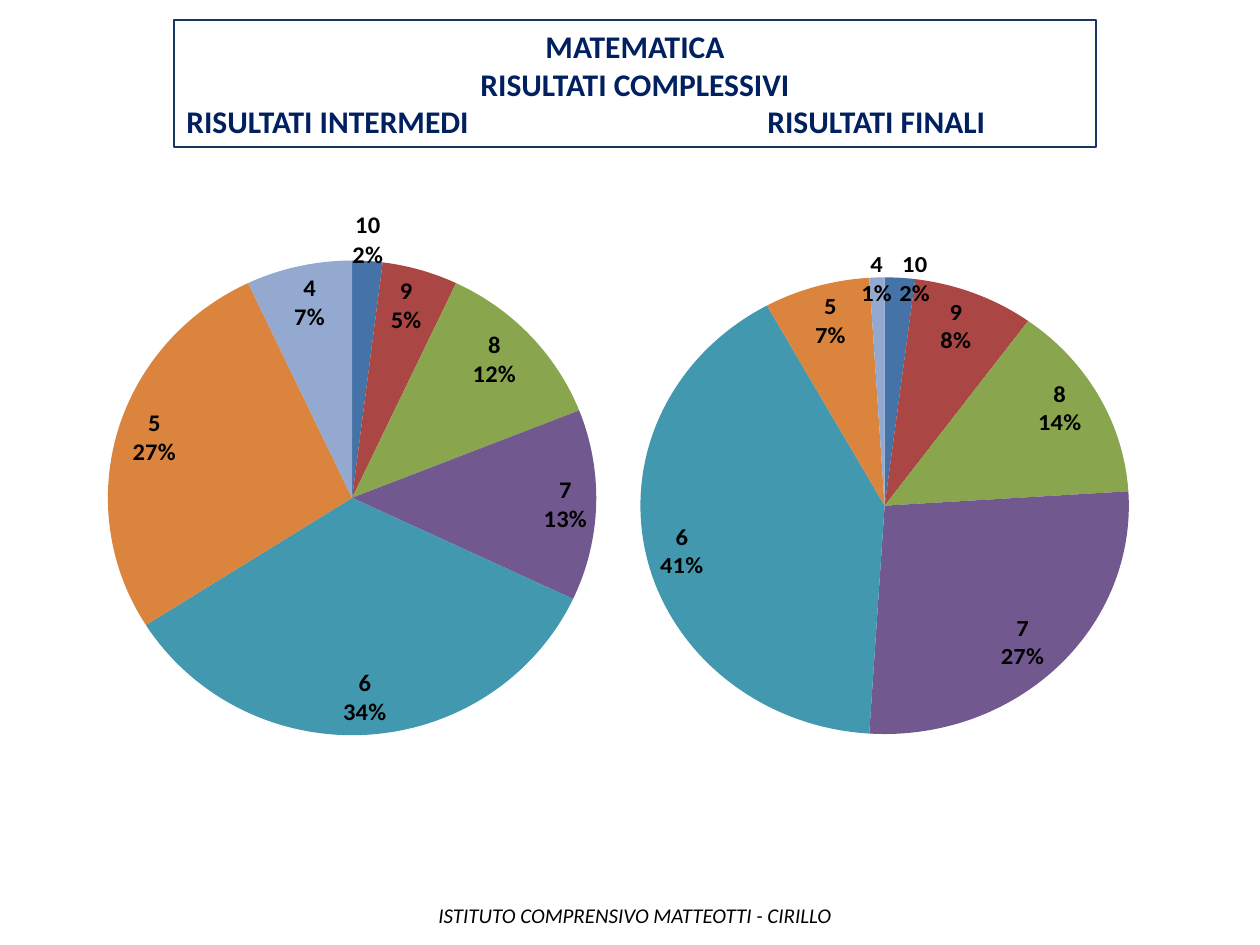
import dataclasses

import lxml.etree
import pptx
import pptx.chart.data
import pptx.dml.color
import pptx.enum.chart
import pptx.enum.shapes
import pptx.enum.text
import pptx.oxml
import pptx.oxml.ns
import pptx.util

SCALE = 914400 / 126
MARKS = ("10", "9", "8", "7", "6", "5", "4")
ALIGN = pptx.enum.text.PP_ALIGN


@dataclasses.dataclass(frozen=True)
class Theme:
    font: str = "Calibri"
    navy: str = "002060"
    edge: str = "17375E"
    ink: str = "000000"
    head: int = 18
    label: int = 14
    foot: int = 12
    slices: tuple = ("4572A7", "AA4643", "89A54E", "71588F",
                     "4198AF", "DB843D", "93A9CF")


THEME = Theme()


def px(size):
    return pptx.util.Emu(round(size * SCALE))


def rgb(code):
    return pptx.dml.color.RGBColor.from_string(code)


def style(font, color, **values):
    """Set the theme font, a colour and any other font values."""
    font.color.rgb = rgb(color)
    for name, value in {"name": THEME.font, **values}.items():
        setattr(font, name, value)


def add_tab(para, place):
    """Add a left tab stop, in px from the text edge."""
    props = para._p.get_or_add_pPr()
    stops = lxml.etree.SubElement(props, pptx.oxml.ns.qn("a:tabLst"))
    lxml.etree.SubElement(stops, pptx.oxml.ns.qn("a:tab"),
                          pos=str(px(place)), algn="l")


def add_head(slide, box, lines, tab):
    shape = slide.shapes.add_shape(
        pptx.enum.shapes.MSO_SHAPE.RECTANGLE, *map(px, box))
    shape.shadow.inherit = False
    shape.fill.background()
    shape.line.color.rgb = rgb(THEME.edge)
    shape.line.width = pptx.util.Pt(0.75)
    frame = shape.text_frame
    frame.word_wrap = True
    for row, (text, align) in enumerate(lines):
        para = frame.add_paragraph() if row else frame.paragraphs[0]
        para.alignment = align
        if "\t" in text:
            add_tab(para, tab)
        run = para.add_run()
        run.text = text
        style(run.font, THEME.navy, size=pptx.util.Pt(THEME.head), bold=True)


def add_foot(slide, box, text):
    frame = slide.shapes.add_textbox(*map(px, box)).text_frame
    frame.word_wrap = True
    para = frame.paragraphs[0]
    para.alignment = ALIGN.CENTER
    run = para.add_run()
    run.text = text
    style(run.font, THEME.ink, size=pptx.util.Pt(THEME.foot), italic=True)


def set_plot(chart, area):
    """Fix the inner plot area, in fractions of the chart."""
    plot = chart._chartSpace.chart.plotArea
    for old in plot.findall(pptx.oxml.ns.qn("c:layout")):
        plot.remove(old)
    parts = {"layoutTarget": "inner", "xMode": "edge", "yMode": "edge",
             **dict(zip("xywh", area))}
    inner = "".join(f'<c:{tag} val="{val}"/>' for tag, val in parts.items())
    plot.insert(0, pptx.oxml.parse_xml(
        f'<c:layout {pptx.oxml.ns.nsdecls("c")}>'
        f"<c:manualLayout>{inner}</c:manualLayout></c:layout>"))


def set_labels(plot):
    """Show each mark above its share."""
    plot.has_data_labels = True
    labels = plot.data_labels
    values = {
        "show_category_name": True,
        "show_percentage": True,
        "show_value": False,
        "position": pptx.enum.chart.XL_LABEL_POSITION.BEST_FIT,
    }
    for name, value in values.items():
        setattr(labels, name, value)
    style(labels.font, THEME.ink, size=pptx.util.Pt(THEME.label), bold=True)
    split = lxml.etree.Element(pptx.oxml.ns.qn("c:separator"))
    split.text = "\n"
    last = labels._element.find(pptx.oxml.ns.qn("c:showBubbleSize"))
    if last is None:
        last = labels._element.find(pptx.oxml.ns.qn("c:showPercent"))
    last.addnext(split)


def add_pie(slide, box, area, name, shares):
    data = pptx.chart.data.CategoryChartData()
    data.categories = MARKS
    data.add_series(name, shares)
    chart = slide.shapes.add_chart(
        pptx.enum.chart.XL_CHART_TYPE.PIE, *map(px, box), data).chart
    chart.has_title = False
    chart.has_legend = False
    style(chart.font, THEME.ink, size=pptx.util.Pt(THEME.head))
    set_plot(chart, area)
    plot = chart.plots[0]
    plot.vary_by_categories = True
    for spot, color in enumerate(THEME.slices):
        fill = plot.series[0].points[spot].format.fill
        fill.solid()
        fill.fore_color.rgb = rgb(color)
    set_labels(plot)


def main():
    deck = pptx.Presentation()
    deck.slide_width, deck.slide_height = px(1260), px(945)
    slide = deck.slides.add_slide(deck.slide_layouts[6])
    add_head(slide, (174, 20, 922, 127), (
        ("MATEMATICA", ALIGN.CENTER),
        ("RISULTATI COMPLESSIVI", ALIGN.CENTER),
        ("RISULTATI INTERMEDI\tRISULTATI FINALI", ALIGN.LEFT),
    ), tab=581)
    add_foot(slide, (405, 896, 460, 38),
             "ISTITUTO COMPRENSIVO MATTEOTTI - CIRILLO")
    pies = (
        ((44, 195), (0.04, 0.09, 0.49, 0.86), "Intermedi",
         (2, 5, 12, 13, 34, 27, 7)),
        ((74, 214), (0.51, 0.05, 0.48, 0.86), "Finali",
         (2, 8, 14, 27, 41, 7, 1)),
    )
    for place, area, name, shares in pies:
        add_pie(slide, (*place, 1081, 568), area, name, shares)
    deck.save("out.pptx")


if __name__ == "__main__":
    main()
